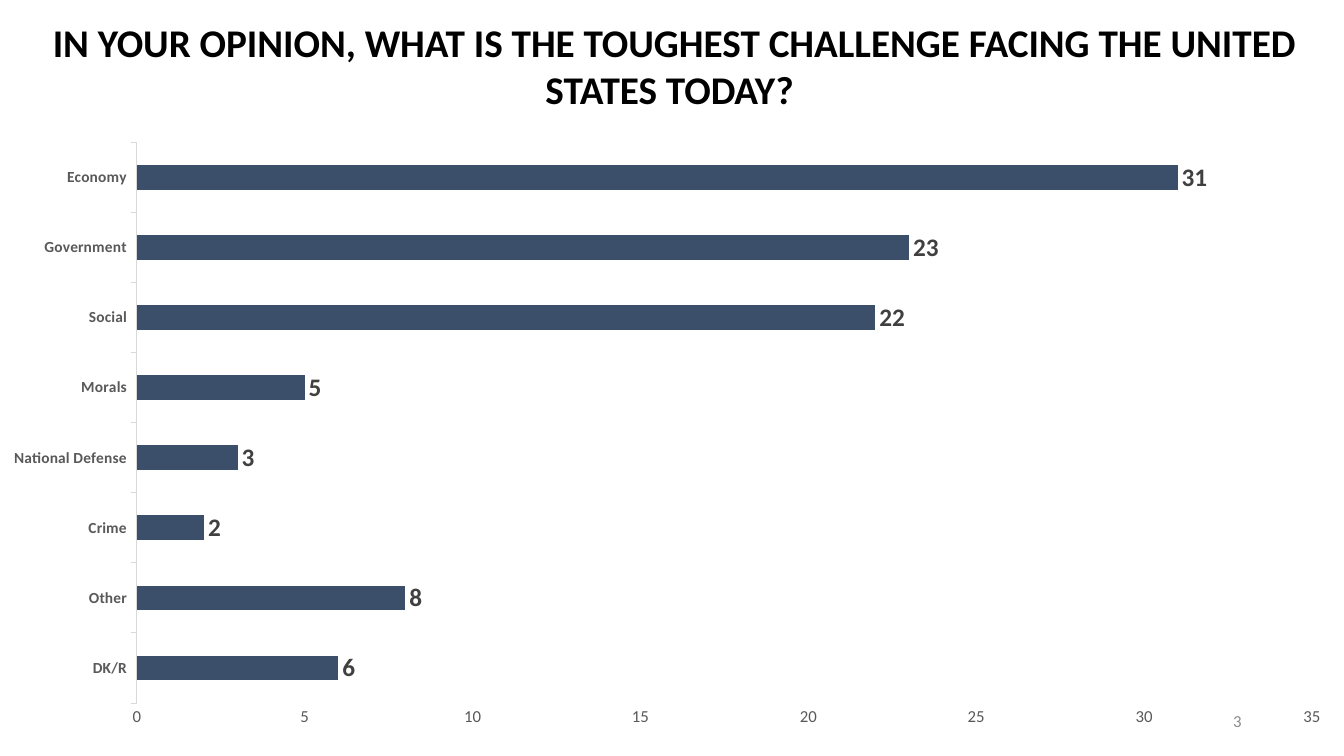
from dataclasses import dataclass

from lxml import etree
from pptx import Presentation
from pptx.chart.data import CategoryChartData
from pptx.dml.color import RGBColor
from pptx.enum.chart import XL_CHART_TYPE as ChartType
from pptx.enum.chart import XL_LABEL_POSITION as LabelPosition
from pptx.enum.chart import XL_TICK_MARK as TickMark
from pptx.enum.text import MSO_ANCHOR as Anchor
from pptx.enum.text import PP_ALIGN as Align
from pptx.oxml.ns import qn
from pptx.util import Pt

# Content
TITLE = "IN YOUR OPINION, WHAT IS THE TOUGHEST CHALLENGE FACING THE UNITED STATES TODAY? "
PAGE_NUMBER = "3"
ANSWERS = [
    ("Economy", 31),
    ("Government", 23),
    ("Social", 22),
    ("Morals", 5),
    ("National Defense", 3),
    ("Crime", 2),
    ("Other", 8),
    ("DK/R", 6),
]

# Geometry in px: left, top, width, height
EMU_PER_PX = 9525
PAGE_SIZE = (1280, 720)
TITLE_BOX = (4, 13, 1276, 100)
NUMBER_BOX = (904, 667, 288, 38)
CHART_BOX = (0, 125, 1266, 587)
PLOT_SHARE = {"x": 0.103, "y": 0.018, "w": 0.884, "h": 0.91}


@dataclass(frozen=True)
class Theme:
    font: str = "Calibri"
    title: str = "000000"
    bar: str = "3B4F6A"
    value: str = "404040"
    axis: str = "595959"
    axis_line: str = "D9D9D9"
    number: str = "8C8C8C"
    title_size: int = 28
    value_size: int = 18
    category_size: int = 11
    small_size: int = 12


THEME = Theme()


def px(lengths):
    return [length * EMU_PER_PX for length in lengths]


def style(font, size, color, bold=False):
    font.name = THEME.font
    font.size = Pt(size)
    font.bold = bold
    font.color.rgb = RGBColor.from_string(color)


def add_text(page, place, text, align, anchor, size, color, bold=False):
    frame = page.shapes.add_textbox(*px(place)).text_frame
    frame.word_wrap = True
    frame.vertical_anchor = anchor
    para = frame.paragraphs[0]
    para.text = text
    para.alignment = align
    style(para.font, size, color, bold)


def set_plot_layout(chart):
    plot_area = chart._chartSpace.chart.plotArea
    for old in plot_area.findall(qn("c:layout")):
        plot_area.remove(old)
    layout = etree.Element(qn("c:layout"))
    manual = etree.SubElement(layout, qn("c:manualLayout"))
    settings = {"layoutTarget": "inner", "xMode": "edge", "yMode": "edge", **PLOT_SHARE}
    for name, value in settings.items():
        etree.SubElement(manual, qn(f"c:{name}")).set("val", str(value))
    plot_area.insert(0, layout)


def add_answer_chart(page):
    # Bars are stacked from the bottom, so the last answer goes in first
    data = CategoryChartData()
    names, values = zip(*reversed(ANSWERS))
    data.categories = names
    data.add_series("Series 1", values)
    chart = page.shapes.add_chart(ChartType.BAR_CLUSTERED, *px(CHART_BOX), data).chart
    chart.has_title = False
    chart.has_legend = False
    style(chart.font, THEME.small_size, THEME.axis)
    set_plot_layout(chart)

    # Bars and value labels
    plot = chart.plots[0]
    plot.gap_width = 182
    plot.vary_by_categories = False
    fill = plot.series[0].format.fill
    fill.solid()
    fill.fore_color.rgb = RGBColor.from_string(THEME.bar)
    plot.has_data_labels = True
    labels = plot.data_labels
    labels.show_value = True
    labels.position = LabelPosition.OUTSIDE_END
    style(labels.font, THEME.value_size, THEME.value, True)

    # Axes
    category = chart.category_axis
    category.major_tick_mark = TickMark.OUTSIDE
    category.format.line.width = Pt(0.75)
    category.format.line.color.rgb = RGBColor.from_string(THEME.axis_line)
    style(category.tick_labels.font, THEME.category_size, THEME.axis, True)
    scale = chart.value_axis
    scale.minimum_scale, scale.maximum_scale, scale.major_unit = 0, 35, 5
    scale.has_major_gridlines = False
    scale.major_tick_mark = TickMark.NONE
    scale.format.line.fill.background()
    style(scale.tick_labels.font, THEME.small_size, THEME.axis)


def main():
    deck = Presentation()
    deck.slide_width, deck.slide_height = px(PAGE_SIZE)
    page = deck.slides.add_slide(deck.slide_layouts[6])
    add_text(page, TITLE_BOX, TITLE, Align.CENTER, Anchor.TOP,
             THEME.title_size, THEME.title, True)
    add_text(page, NUMBER_BOX, PAGE_NUMBER, Align.RIGHT, Anchor.MIDDLE,
             THEME.small_size, THEME.number)
    add_answer_chart(page)
    deck.save("out.pptx")


if __name__ == "__main__":
    main()
